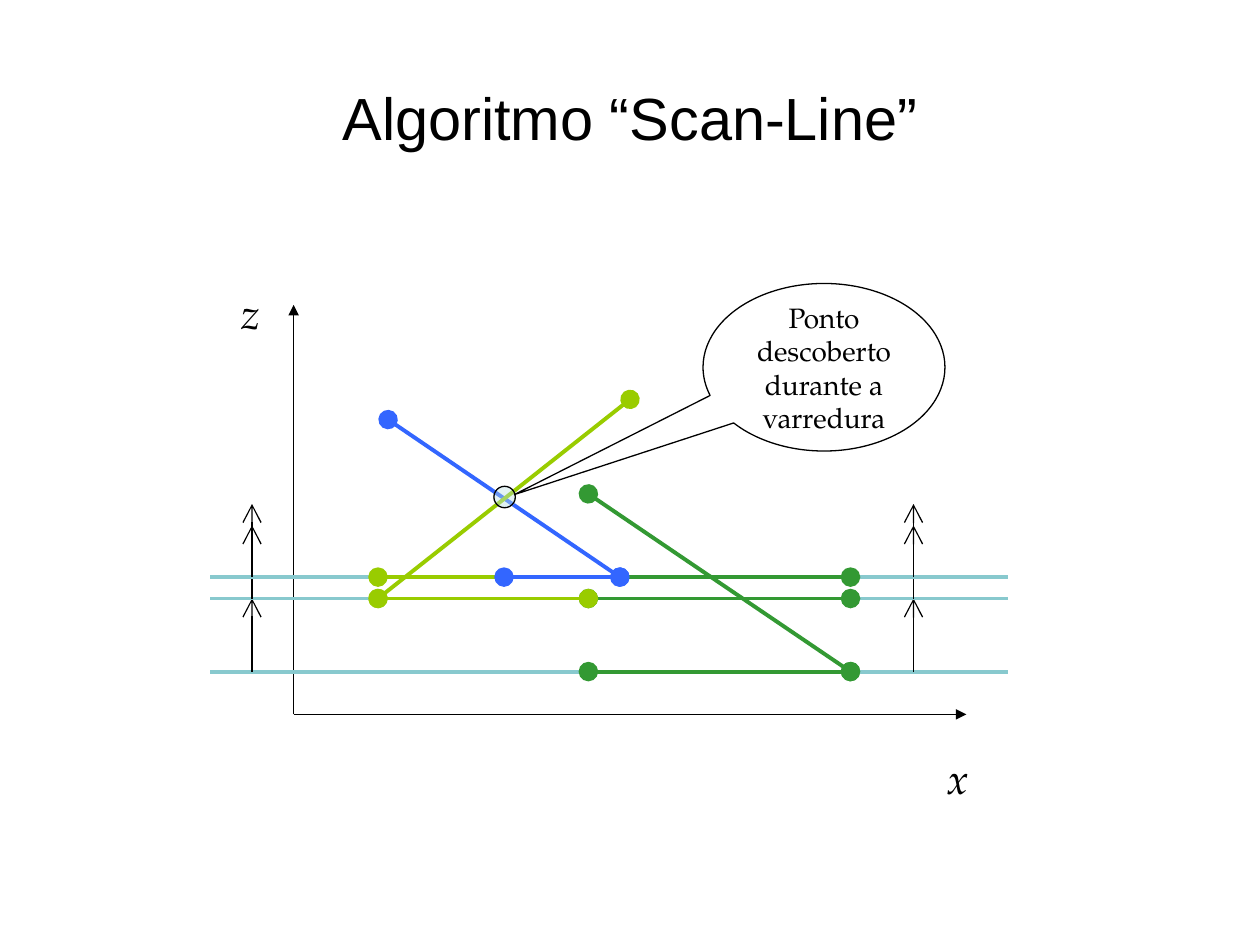
import pptx
import pptx.dml.color
import pptx.enum.shapes
import pptx.enum.text
import pptx.oxml.ns
import pptx.util
import lxml.etree

Inches = pptx.util.Inches
Pt = pptx.util.Pt
MSO_SHAPE = pptx.enum.shapes.MSO_SHAPE
PP_ALIGN = pptx.enum.text.PP_ALIGN
MSO_ANCHOR = pptx.enum.text.MSO_ANCHOR
qn = pptx.oxml.ns.qn

COLORS = {
    "ink": "000000",
    "blue": "3366FF",
    "lime": "99CC00",
    "green": "339933",
    "scan": "88C9CE",
    "lens": "BBE0E3",
}
THIN, THICK = 0.75, 2.25
END_SIZES = {"oval": "lg", "arrow": "lg", "triangle": "med"}


class Diagram:
    """Holds the style and the current slide."""

    title_font = "Arial"
    body_font = "TeX Gyre Pagella"

    def __init__(self, slide):
        self.slide = slide

    def color(self, name):
        return pptx.dml.color.RGBColor.from_string(COLORS[name])

    def set_text(self, shape, text, size, font, align=PP_ALIGN.LEFT, italic=False):
        paragraph = shape.text_frame.paragraphs[0]
        paragraph.text = text
        paragraph.alignment = align
        paragraph.font.size = Pt(size)
        paragraph.font.name = font
        paragraph.font.italic = italic
        paragraph.font.color.rgb = self.color("ink")

    def title(self, text, left, top, width, height):
        box = self.slide.shapes.add_textbox(
            Inches(left), Inches(top), Inches(width), Inches(height))
        box.text_frame.word_wrap = True
        box.text_frame.vertical_anchor = MSO_ANCHOR.MIDDLE
        self.set_text(box, text, 34, self.title_font, PP_ALIGN.CENTER)

    def axis_label(self, text, left, top, width):
        box = self.slide.shapes.add_textbox(
            Inches(left), Inches(top), Inches(width), Inches(0.5))
        box.text_frame.word_wrap = False
        box.text_frame.auto_size = pptx.enum.text.MSO_AUTO_SIZE.SHAPE_TO_FIT_TEXT
        self.set_text(box, text, 24, self.body_font, italic=True)

    def line(self, start, end, color="ink", width=THIN, head=None, tail=None):
        connector = self.slide.shapes.add_connector(
            pptx.enum.shapes.MSO_CONNECTOR.STRAIGHT,
            *(Inches(length) for length in (*start, *end)))
        connector.line.color.rgb = self.color(color)
        connector.line.width = Pt(width)
        properties = connector._element.spPr
        outline = properties.find(qn("a:ln"))
        for tag, kind in (("a:headEnd", head), ("a:tailEnd", tail)):
            if kind:
                size = END_SIZES[kind]
                lxml.etree.SubElement(outline, qn(tag), type=kind, w=size, len=size)
        lxml.etree.SubElement(properties, qn("a:effectLst"))

    def segment(self, start, end, color, head="oval", tail="oval"):
        self.line(start, end, color, THICK, head, tail)

    def outlined(self, preset, left, top, width, height):
        shape = self.slide.shapes.add_shape(
            preset, Inches(left), Inches(top), Inches(width), Inches(height))
        shape.shadow.inherit = False
        shape.line.color.rgb = self.color("ink")
        shape.line.width = Pt(THIN)
        return shape

    def lens(self, left, top, size, opacities):
        circle = self.outlined(MSO_SHAPE.OVAL, left, top, size, size)
        circle.fill.gradient()
        circle.fill.gradient_angle = 270
        for stop in circle.fill.gradient_stops:
            stop.color.rgb = self.color("lens")
        grading = circle._element.spPr.find(qn("a:gradFill"))
        for tint, opacity in zip(grading.iter(qn("a:srgbClr")), opacities):
            lxml.etree.SubElement(tint, qn("a:alpha"), val=str(opacity * 1000))

    def callout(self, text, left, top, width, height, tip):
        balloon = self.outlined(
            MSO_SHAPE.OVAL_CALLOUT, left, top, width, height)
        balloon.fill.background()
        balloon.adjustments[0], balloon.adjustments[1] = tip
        balloon.text_frame.word_wrap = True
        balloon.text_frame.vertical_anchor = MSO_ANCHOR.MIDDLE
        self.set_text(balloon, text, 16, self.body_font, PP_ALIGN.CENTER)

    def scan_line(self, y, spans):
        """A sweep line, its two upward arrows and the spans visible on it."""
        self.line((1.67, y), (8, y), "scan", THICK)
        for x in (2, 7.25):
            self.line((x, y), (x, y - 0.58), tail="arrow")
        for left, right, color, head, tail in spans:
            self.segment((left, y), (right, y), color, head, tail)


def main():
    deck = pptx.Presentation()
    deck.slide_width, deck.slide_height = Inches(10), Inches(7.5)
    diagram = Diagram(deck.slides.add_slide(deck.slide_layouts[6]))

    diagram.title("Algoritmo “Scan-Line”", 0.5, 0.3, 9, 1.25)

    # Axes
    origin = (2.33, 5.67)
    for tip in ((2.33, 2.42), (7.67, 5.67)):
        diagram.line(origin, tip, tail="triangle")
    diagram.axis_label("z", 1.82, 2.23, 0.35)
    diagram.axis_label("x", 7.42, 5.92, 0.37)

    # Segments being scanned
    diagram.segment((3.08, 3.33), (4.92, 4.58), "blue")
    diagram.segment((3, 4.75), (5, 3.17), "lime")
    diagram.segment((4.67, 3.92), (6.75, 5.33), "green")

    # Crossing point and its note
    diagram.lens(3.92, 3.86, 0.17, (35, 48))
    diagram.callout("Ponto descoberto durante a varredura",
                    5.58, 2.25, 1.92, 1.33, (-1.28, 0.76))

    # Sweep from bottom to top
    diagram.scan_line(5.33, [(4.67, 6.75, "green", "oval", "oval")])
    diagram.scan_line(4.75, [(4.67, 6.75, "green", "oval", "oval"),
                             (3, 4.67, "lime", "oval", "oval")])
    diagram.scan_line(4.58, [(4.67, 6.75, "green", None, "oval"),
                             (3, 4.92, "lime", "oval", None),
                             (4, 4.92, "blue", "oval", "oval")])

    deck.save("out.pptx")


if __name__ == "__main__":
    main()
